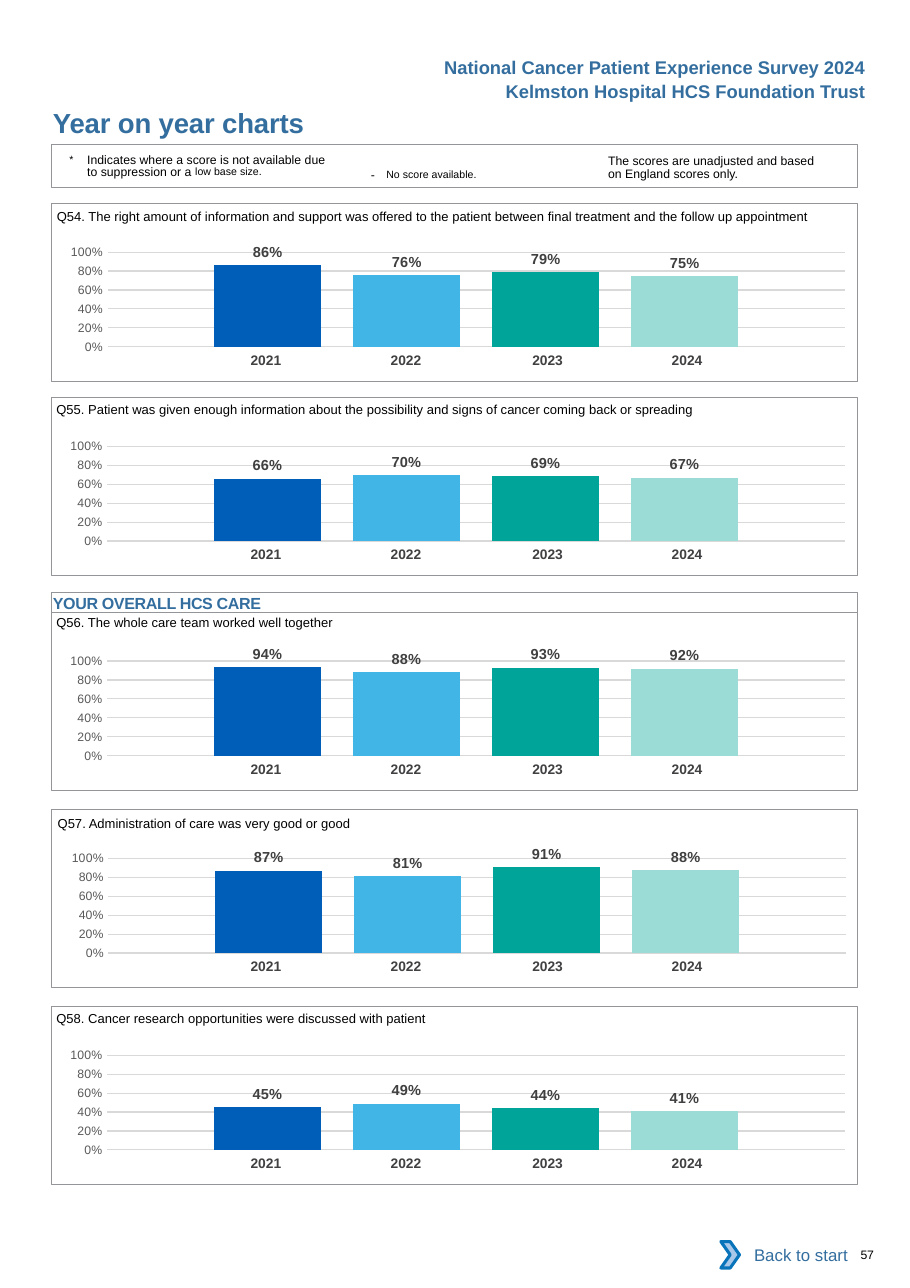
from dataclasses import dataclass

from lxml import etree
from pptx import Presentation
from pptx import util as u
from pptx.chart import data as chart_data
from pptx.dml import color
from pptx.enum import chart as charts, shapes, text
from pptx.oxml import ns, parse_xml


@dataclass(frozen=True)
class Theme:
    face: str = "Arial"
    heading: str = "336E9F"
    ink: str = "000000"
    year: str = "414042"
    score: str = "404040"
    scale: str = "595959"
    grid: str = "D9D9D9"
    frame: str = "939598"
    paper: str = "FFFFFF"
    arrow: str = "A8C7E9"
    arrow_edge: str = "0A74BB"
    bars: tuple = ("005EB8", "41B6E6", "00A499", "9CDCD7")
    title_size: float = 18
    header_size: float = 12
    link_size: float = 11
    section_size: float = 10.5
    score_size: float = 9.5
    year_size: float = 9
    question_size: float = 8.5
    note_size: float = 8
    raised_size: float = 12


@dataclass(frozen=True)
class Question:
    top: float
    wording: str
    scores: tuple
    caption_rise: float
    shift: float = 0


THEME = Theme()
YEARS = ("2021", "2022", "2023", "2024")
LEFT, WIDTH, PANEL_HEIGHT = 1.19, 18.59, 4.11
QUESTIONS = (
    Question(4.69, "Q54. The right amount of information and support was offered to the patient "
             "between final treatment and the follow up appointment", (0.86, 0.76, 0.79, 0.75), 0.11, 0.01),
    Question(9.17, "Q55. Patient was given enough information about the possibility and signs of "
             "cancer coming back or spreading", (0.66, 0.7, 0.69, 0.67), 0.15),
    Question(14.12, "Q56. The whole care team worked well together", (0.94, 0.88, 0.93, 0.92), 0.17),
    Question(18.67, "Q57. Administration of care was very good or good", (0.87, 0.81, 0.91, 0.88), 0.1, 0.03),
    Question(23.21, "Q58. Cancer research opportunities were discussed with patient",
             (0.45, 0.49, 0.44, 0.41), 0.13),
)


def rgb(value):
    return color.RGBColor.from_string(value)


def style(font, size, ink, bold=False):
    font.name, font.size, font.bold = THEME.face, u.Pt(size), bold
    font.color.rgb = rgb(ink)


def add_run(paragraph, words, size, ink=THEME.ink, bold=False, raised=0, spacing=0):
    run = paragraph.add_run()
    run.text = words
    style(run.font, size, ink, bold)
    properties = run._r.get_or_add_rPr()
    if raised:
        properties.set("baseline", str(raised * 1000))
    if spacing:
        properties.set("spc", str(round(spacing * 100)))


def set_margins(holder, left=0, top=0, right=0, bottom=0):
    holder.margin_left, holder.margin_top = u.Cm(left), u.Cm(top)
    holder.margin_right, holder.margin_bottom = u.Cm(right), u.Cm(bottom)


def add_text(slide, box, margins=(0, 0, 0, 0), wrap=True):
    frame = slide.shapes.add_textbox(*map(u.Cm, box)).text_frame
    frame.word_wrap = wrap
    set_margins(frame, *margins)
    return frame.paragraphs[0]


def add_outline(slide, box, kind=shapes.MSO_SHAPE.RECTANGLE, fill=None, line=THEME.frame, weight=0.5):
    outline = slide.shapes.add_shape(kind, *map(u.Cm, box))
    outline.shadow.inherit = False
    if fill:
        outline.fill.solid()
        outline.fill.fore_color.rgb = rgb(fill)
    else:
        outline.fill.background()
    if line:
        outline.line.color.rgb = rgb(line)
        outline.line.width = u.Pt(weight)
    else:
        outline.line.fill.background()
    return outline


def add_header(slide, left, top, width):
    lines = ("National Cancer Patient Experience Survey 2024", "Kelmston Hospital HCS Foundation Trust")
    for row, words in enumerate(lines):
        heading = add_text(slide, (left + width - 9.83, top + row * 0.56, 10.26, 0.76),
                           (0.25, 0.13, 0.25, 0.13), wrap=False)
        heading.alignment = text.PP_ALIGN.RIGHT
        add_run(heading, words, THEME.header_size, THEME.heading, True)
    title = add_text(slide, (left, top + 1.28, 11.43, 0.76), (0.03, 0, 0, 0))
    add_run(title, "Year on year charts", THEME.title_size, THEME.heading, True, spacing=-0.1)


def add_legend(slide, left, top, width, height):
    add_outline(slide, (left, top, width, height), weight=0.75)
    suppressed = add_text(slide, (left + 0.41, top + 0.18, 6, 0.7), (0, 0.08, 0, 0))
    suppressed.line_spacing = u.Pt(8.1)
    indent = suppressed._p.get_or_add_pPr()
    indent.set("marL", str(u.Cm(0.41)))
    indent.set("indent", str(u.Cm(-0.41)))
    add_run(suppressed, "*\t", THEME.raised_size, raised=3)
    add_run(suppressed, "Indicates where a score is not available due to suppression or a ", THEME.note_size)
    add_run(suppressed, "low base size.", THEME.raised_size, raised=7)

    missing = add_text(slide, (left + 7.11, top + 0.25, 4.65, 0.61), (0.25, 0.13, 0.25, 0.13))
    add_run(missing, "- ", THEME.note_size, spacing=2.6)
    add_run(missing, "No score available.", THEME.raised_size, raised=3)

    basis = add_text(slide, (left + 12.83, top + 0.18, 5.1, 0.69), (0, 0.08, 0, 0))
    basis.line_spacing = u.Pt(8.1)
    add_run(basis, "The scores are unadjusted and based on England scores only.", THEME.note_size)


def add_years(slide, left, top):
    widths, right_margins = (3.23, 3.23, 3.4, 3.23), (0, 0, 0.1, 0.3)
    holder = slide.shapes.add_table(1, len(YEARS), *map(u.Cm, (left, top, sum(widths), 0.69)))
    table = holder.table
    table.first_row = table.horz_banding = False
    table._tbl.tblPr.find(ns.qn("a:tableStyleId")).text = "{2D5ABB26-0587-4C30-8999-92F81FD0307C}"
    for column, (year, width, margin) in enumerate(zip(YEARS, widths, right_margins)):
        table.columns[column].width = u.Cm(width)
        cell = table.cell(0, column)
        cell.fill.background()
        set_margins(cell, 0.25, 0.13, margin, 0.13)
        paragraph = cell.text_frame.paragraphs[0]
        paragraph.alignment = text.PP_ALIGN.CENTER
        add_run(paragraph, year, THEME.year_size, THEME.year, True)


def set_plot_area(chart, x, y, w, h):
    area = chart._chartSpace.chart.plotArea
    for old in area.findall(ns.qn("c:layout")):
        area.remove(old)
    layout = parse_xml(f'<c:layout {ns.nsdecls("c")}><c:manualLayout/></c:layout>')
    settings = {"layoutTarget": "inner", "xMode": "edge", "yMode": "edge", "x": x, "y": y, "w": w, "h": h}
    for tag, value in settings.items():
        etree.SubElement(layout[0], ns.qn(f"c:{tag}")).set("val", str(value))
    area.insert(0, layout)


def add_scores(slide, box, scores):
    values = chart_data.CategoryChartData(number_format="0%")
    values.categories = ["1"]
    for number, score in enumerate(scores, 1):
        values.add_series(f"Series {number}", [score])
    chart = slide.shapes.add_chart(charts.XL_CHART_TYPE.COLUMN_CLUSTERED, *map(u.Cm, box), values).chart
    chart.has_title = chart.has_legend = False
    style(chart.font, THEME.note_size, THEME.ink)
    chart.category_axis.visible = False
    axis = chart.value_axis
    axis.minimum_scale, axis.maximum_scale, axis.major_unit = 0, 1, 0.2
    axis.major_tick_mark = axis.minor_tick_mark = charts.XL_TICK_MARK.NONE
    axis.format.line.fill.background()
    axis.major_gridlines.format.line.color.rgb = rgb(THEME.grid)
    axis.major_gridlines.format.line.width = u.Pt(0.75)
    style(axis.tick_labels.font, THEME.note_size, THEME.scale)
    axis.tick_labels.number_format = "0%"
    axis.tick_labels.number_format_is_linked = False
    plot = chart.plots[0]
    plot.gap_width, plot.overlap, plot.vary_by_categories = 200, -30, False
    for series, fill in zip(plot.series, THEME.bars):
        series.format.fill.solid()
        series.format.fill.fore_color.rgb = rgb(fill)
        labels = series.data_labels
        labels.show_value = True
        labels.position = charts.XL_LABEL_POSITION.OUTSIDE_END
        labels.number_format, labels.number_format_is_linked = "0%", False
        style(labels.font, THEME.score_size, THEME.score, True)
    set_plot_area(chart, 0.079, 0.145, 0.915, 0.666)


def add_question(slide, left, top, width, height, question):
    add_years(slide, left + 3.2, top + 3.32)
    add_scores(slide, (left - 0.19 + question.shift, top + 0.65, width, 3.28), question.scores)
    caption = add_text(slide, (left + 0.11 + question.shift, top - question.caption_rise, width - 0.15, 0.61),
                       (0, 0.23, 0, 0))
    add_run(caption, question.wording, THEME.question_size)
    add_outline(slide, (left, top, width, height))


def add_section(slide, left, top, width, height):
    frame = add_outline(slide, (left, top, width, height)).text_frame
    set_margins(frame, 0.03, 0.03)
    frame.vertical_anchor = text.MSO_ANCHOR.TOP
    heading = frame.paragraphs[0]
    heading.alignment = text.PP_ALIGN.LEFT
    add_run(heading, "YOUR OVERALL HCS CARE", THEME.section_size, THEME.heading, True, spacing=-0.2)


def add_footer(slide, left, top):
    link = add_outline(slide, (left + 0.18, top, 3, 1.07), fill=THEME.paper, line=None).text_frame
    link.vertical_anchor = text.MSO_ANCHOR.MIDDLE
    link.paragraphs[0].alignment = text.PP_ALIGN.RIGHT
    add_run(link.paragraphs[0], "Back to start", THEME.link_size, THEME.heading)
    add_outline(slide, (left, top + 0.23, 0.43, 0.61), shapes.MSO_SHAPE.CHEVRON,
                THEME.arrow, THEME.arrow_edge, 2)
    page = add_text(slide, (left + 2.97, top + 0.36, 1.3, 0.33), (0.25, 0, 0, 0))
    add_run(page, "57", THEME.note_size, spacing=-0.2)


def main():
    deck = Presentation()
    deck.slide_width, deck.slide_height = u.Cm(20.98), u.Cm(29.7)
    slide = deck.slides.add_slide(deck.slide_layouts[6])
    add_header(slide, LEFT, 1.16, WIDTH)
    add_legend(slide, LEFT, 3.33, WIDTH, 0.99)
    for question in QUESTIONS:
        add_question(slide, LEFT, question.top, WIDTH, PANEL_HEIGHT, question)
    add_section(slide, LEFT, 13.66, WIDTH, 0.46)
    add_footer(slide, 16.62, 28.4)
    deck.save("out.pptx")


if __name__ == "__main__":
    main()
